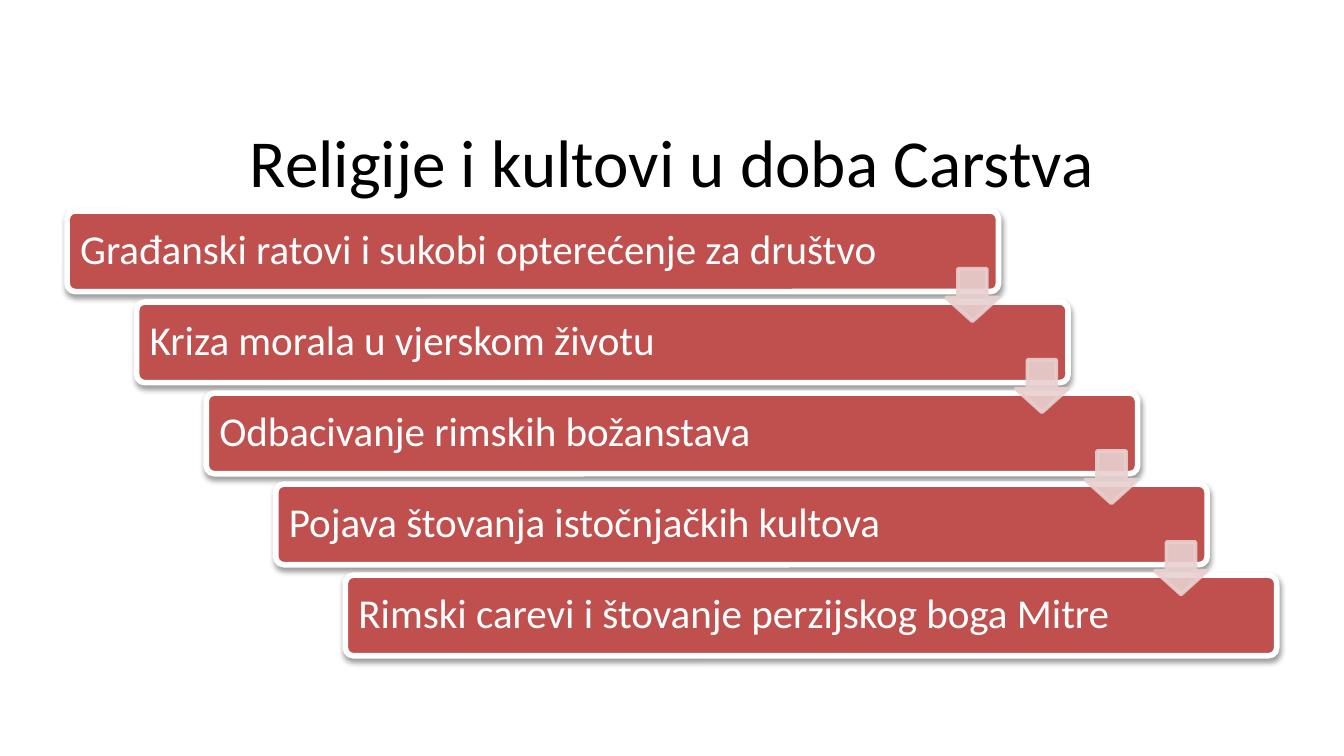
from lxml.etree import SubElement
from pptx import Presentation
from pptx.dml.color import RGBColor
from pptx.enum.shapes import MSO_SHAPE as Preset
from pptx.enum.text import MSO_ANCHOR as Anchor, PP_ALIGN as Align
from pptx.oxml.ns import qn
from pptx.util import Inches, Pt

TITLE = "Religije i kultovi u doba Carstva"
STAGES = [
    "Građanski ratovi i sukobi opterećenje za društvo",
    "Kriza morala u vjerskom životu",
    "Odbacivanje rimskih božanstava",
    "Pojava štovanja istočnjačkih kultova",
    "Rimski carevi i štovanje perzijskog boga Mitre",
]
FIRST_LEFT, LAST_LEFT = 0.5, 2.57
FIRST_TOP, LAST_TOP = 1.57, 4.28
BAR_WIDTH, BAR_HEIGHT = 6.93, 0.6
ARROW_SIZE, ARROW_RIGHT, ARROW_DOWN = 0.39, 6.54, 0.43


def color(value):
    """Turn a hex string into a colour."""
    return RGBColor.from_string(value)


def set_alpha(properties, percent):
    """Make the solid colours of a shape partly transparent."""
    for tint in properties.iter(qn("a:srgbClr")):
        SubElement(tint, qn("a:alpha"), val=str(percent * 1000))


def add_shadow(shape):
    """Give a shape a soft black shadow below it."""
    effects = shape._element.spPr.find(qn("a:effectLst"))
    shadow = SubElement(effects, qn("a:outerShdw"), blurRad=str(Pt(3.1)),
                        dist=str(Pt(1.6)), dir="5400000", rotWithShape="0")
    black = SubElement(shadow, qn("a:srgbClr"), val="000000")
    SubElement(black, qn("a:alpha"), val="38000")


def write(frame, text, size, hue, align):
    """Write one vertically centred paragraph."""
    frame.word_wrap = True
    frame.vertical_anchor = Anchor.MIDDLE
    paragraph = frame.paragraphs[0]
    paragraph.text = text
    paragraph.alignment = align
    paragraph.line_spacing = 0.9
    font = paragraph.font
    font.name, font.size = "Calibri", Pt(size)
    font.color.rgb = color(hue)


def add_title(slide, text):
    """Add the slide heading."""
    heading = slide.shapes.add_textbox(Inches(0.5), Inches(0.84), Inches(9), Inches(0.78))
    write(heading.text_frame, text, 36, "000000", Align.CENTER)


def add_block(slide, preset, left, top, width, height, fill, line, line_width):
    """Add a filled and outlined preset shape."""
    block = slide.shapes.add_shape(preset, Inches(left), Inches(top),
                                   Inches(width), Inches(height))
    block.shadow.inherit = False
    block.fill.solid()
    block.fill.fore_color.rgb = color(fill)
    block.line.color.rgb = color(line)
    block.line.width = Pt(line_width)
    return block


def add_stage(slide, text, left, top):
    """Add one bar of the staircase."""
    bar = add_block(slide, Preset.ROUNDED_RECTANGLE, left, top,
                    BAR_WIDTH, BAR_HEIGHT, "C0504D", "FFFFFF", 3)
    bar.adjustments[0] = 0.1
    add_shadow(bar)
    bar.text_frame.margin_left = Inches(0.08)
    write(bar.text_frame, text, 22, "FFFFFF", Align.LEFT)


def add_arrow(slide, left, top):
    """Add a translucent arrow leading to the next bar."""
    arrow = add_block(slide, Preset.DOWN_ARROW, left + ARROW_RIGHT, top + ARROW_DOWN,
                      ARROW_SIZE, ARROW_SIZE, "E8D0D0", "E8D0D0", 2)
    arrow.adjustments[0] = 0.55
    arrow.adjustments[1] = 0.45
    set_alpha(arrow._element.spPr, 90)


def main():
    """Build and save the slide."""
    deck = Presentation()
    deck.slide_width = Inches(10)
    deck.slide_height = deck.slide_width * 9 // 16
    slide = deck.slides.add_slide(deck.slide_layouts[6])
    add_title(slide, TITLE)

    steps = len(STAGES) - 1
    corners = [(FIRST_LEFT + (LAST_LEFT - FIRST_LEFT) * i / steps,
                FIRST_TOP + (LAST_TOP - FIRST_TOP) * i / steps)
               for i in range(len(STAGES))]
    for text, (left, top) in zip(STAGES, corners):
        add_stage(slide, text, left, top)
    for left, top in corners[:-1]:
        add_arrow(slide, left, top)
    deck.save("out.pptx")


if __name__ == "__main__":
    main()
